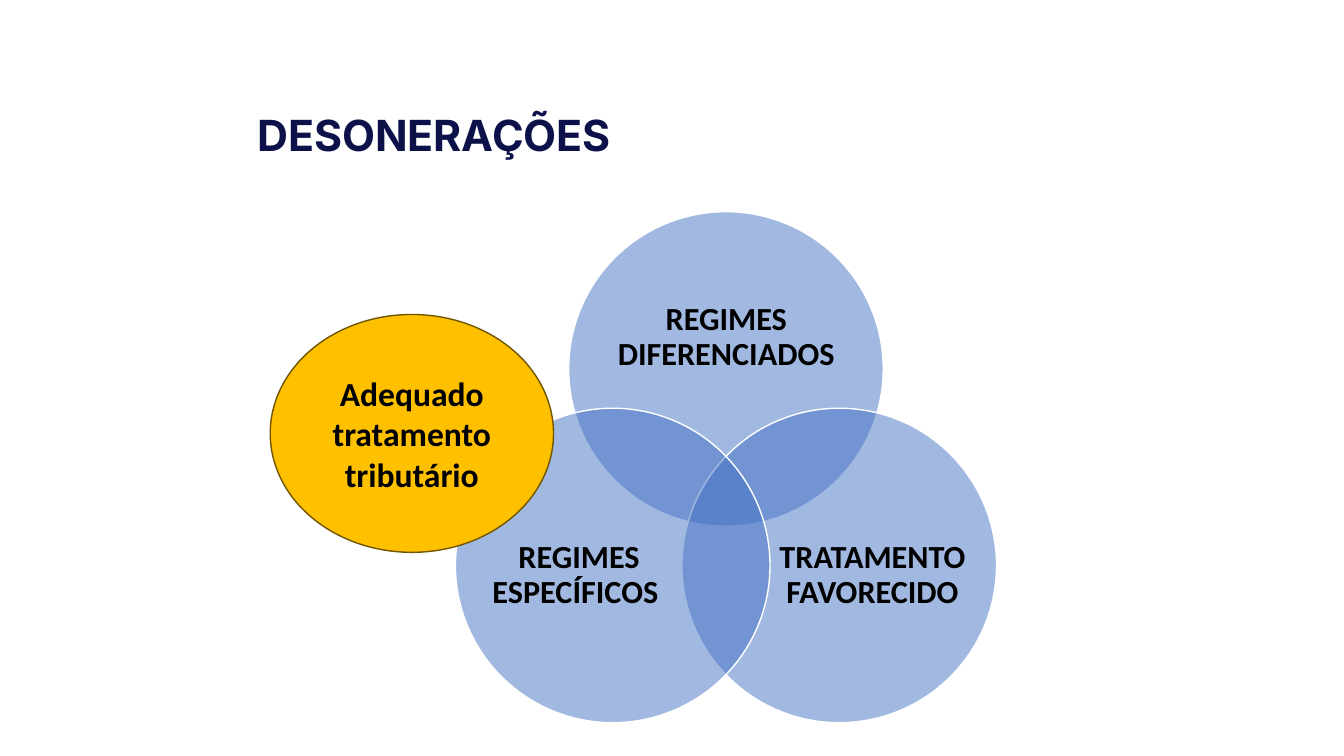
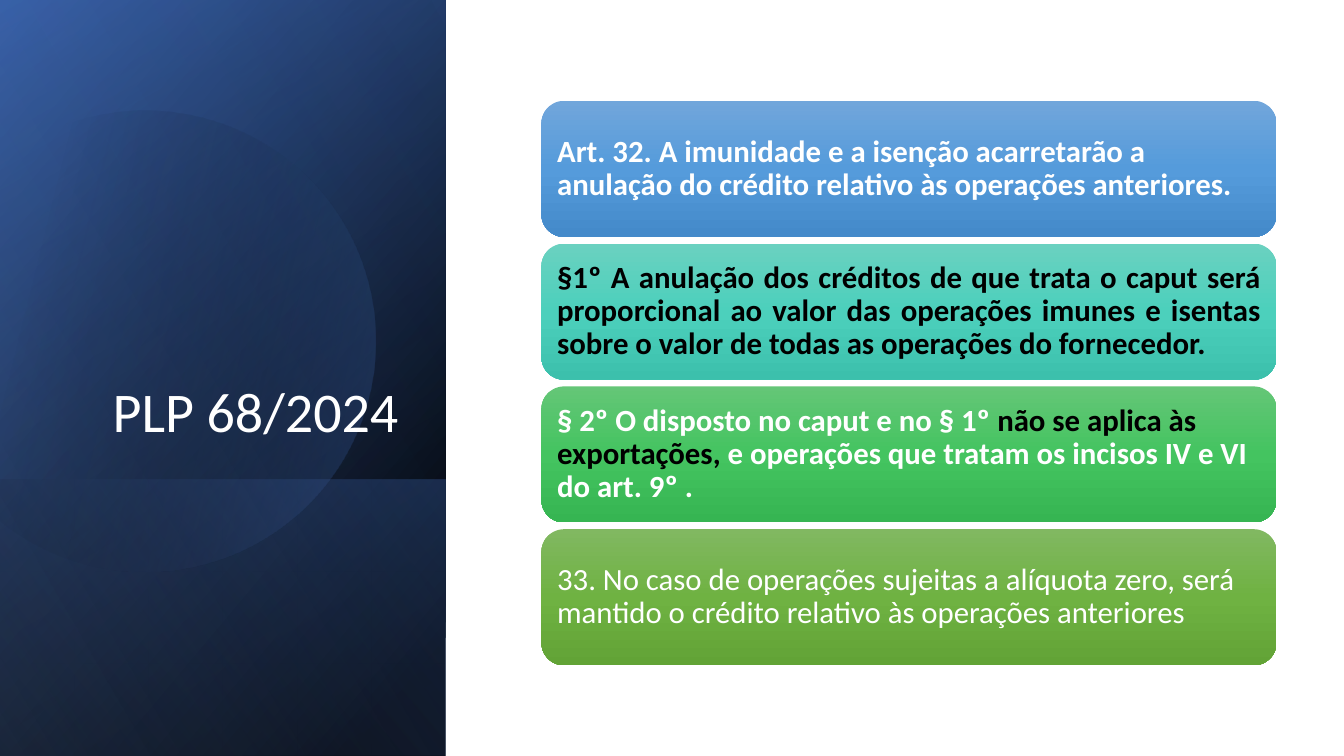
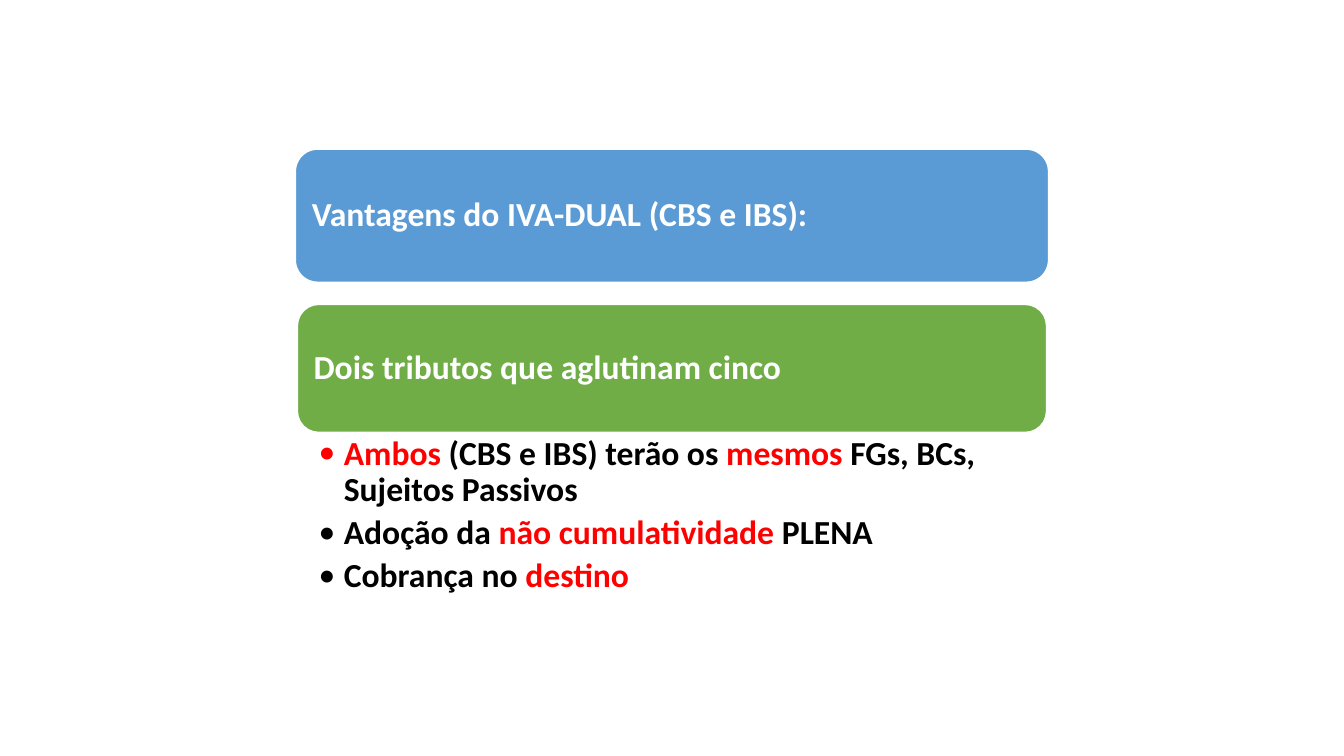
from dataclasses import dataclass
from itertools import pairwise
from math import cos, radians, sin

from lxml.etree import SubElement
from pptx import Presentation
from pptx.dml.color import RGBColor
from pptx.enum.shapes import MSO_SHAPE as SHAPE
from pptx.enum.text import MSO_ANCHOR as ANCHOR, PP_ALIGN as ALIGN
from pptx.oxml.ns import qn
from pptx.util import Inches, Pt


@dataclass(frozen=True)
class Theme:
    font: str = "Calibri"
    title_font: str = "Inter"
    black: str = "000000"
    white: str = "FFFFFF"
    navy: str = "0C1249"
    blue: str = "4472C4"
    deep_blue: str = "2F5597"
    pale_blue: str = "8FAADC"
    sky: str = "5B9BD5"
    green: str = "70AD47"
    gold: str = "FFC000"
    gold_line: str = "705400"
    red: str = "FF0000"
    row_blue: tuple = ("71A6DB", "559BDB", "448ACA")
    row_teal: tuple = ("6AD1C0", "4CD0BC", "3CC0AC")
    row_emerald: tuple = ("64C677", "44C460", "36B552")
    row_green: tuple = ("81B861", "6FB242", "62A336")
    title: float = 30.6
    panel_title: float = 40
    body: float = 24
    circle: float = 23
    article: float = 22


T = Theme()


def add_alpha(clr, opacity):
    SubElement(clr, qn("a:alpha")).set("val", str(opacity * 1000))


def fill_gradient(sp, stops, angle):
    """Stops are (position, colour, opacity), all but colour in percent; angle runs clockwise."""
    sp.fill.gradient()
    grad = sp.element.spPr.find(qn("a:gradFill"))
    for child in list(grad):
        grad.remove(child)
    grad.set("rotWithShape", "1")
    stop_list = SubElement(grad, qn("a:gsLst"))
    for position, color, opacity in stops:
        stop = SubElement(stop_list, qn("a:gs"))
        stop.set("pos", str(position * 1000))
        clr = SubElement(stop, qn("a:srgbClr"))
        clr.set("val", color)
        if opacity < 100:
            add_alpha(clr, opacity)
    lin = SubElement(grad, qn("a:lin"))
    lin.set("ang", str(angle * 60000))
    lin.set("scaled", "0")


def write(tf, paragraphs, size, color=T.black, font=T.font, bold=True, align=ALIGN.LEFT,
          anchor=ANCHOR.MIDDLE, insets=(0.1, 0.05, 0.1, 0.05), spacing=0.9, after=0, bullet=None):
    """Fill a frame; a paragraph is a string or a list of (text, colour) runs."""
    tf.word_wrap = True
    tf.vertical_anchor = anchor
    tf.margin_left, tf.margin_top, tf.margin_right, tf.margin_bottom = map(Inches, insets)
    for i, runs in enumerate(paragraphs):
        p = tf.add_paragraph() if i else tf.paragraphs[0]
        p.alignment, p.line_spacing, p.space_after = align, spacing, Pt(after)
        if bullet:
            pPr = p._p.get_or_add_pPr()
            pPr.set("marL", str(Inches(0.25)))
            pPr.set("indent", str(-Inches(0.25)))
            SubElement(pPr, qn("a:buFont")).set("typeface", font)
            SubElement(pPr, qn("a:buChar")).set("char", bullet)
        for text, run_color in [(runs, color)] if isinstance(runs, str) else runs:
            r = p.add_run()
            r.text = text
            r.font.name, r.font.size, r.font.bold = font, Pt(size), bold
            r.font.color.rgb = RGBColor.from_string(run_color)


class Deck:
    def __init__(self):
        self.prs = Presentation()
        self.prs.slide_width, self.prs.slide_height = Inches(13.33), Inches(7.5)

    def new_slide(self):
        self.slide = self.prs.slides.add_slide(self.prs.slide_layouts[6])

    def text(self, box, paragraphs, size, **fmt):
        sp = self.slide.shapes.add_textbox(*map(Inches, box))
        write(sp.text_frame, paragraphs, size, **fmt)

    def shape(self, kind, box, fill=None, line=None, opacity=100):
        sp = self.slide.shapes.add_shape(kind, *map(Inches, box))
        sp.shadow.inherit = False
        if fill:
            sp.fill.solid()
            sp.fill.fore_color.rgb = RGBColor.from_string(fill)
            if opacity < 100:
                add_alpha(sp.element.spPr.find(qn("a:solidFill"))[0], opacity)
        if line:
            sp.line.color.rgb = RGBColor.from_string(line)
            sp.line.width = Pt(1)
        else:
            sp.line.fill.background()
        return sp

    def panel(self, top, height, stops, angle, width=4.42):
        """Left-hand gradient panel, a flipped rectangle turned a quarter."""
        box = ((width - height) / 2, top + (height - width) / 2, height, width)
        sp = self.shape(SHAPE.RECTANGLE, box)
        sp.rotation = 90
        sp.element.spPr.find(qn("a:xfrm")).set("flipH", "1")
        fill_gradient(sp, stops, angle)

    def cut_disc(self, cx, cy, radius, angles, rotation, stops, angle):
        """Disc with a straight cut, its arcs joining the given angles clockwise."""
        points = [(Inches(cx + radius * cos(radians(a))),
                   Inches(cy + radius * sin(radians(a)))) for a in angles]
        builder = self.slide.shapes.build_freeform(*points[0])
        builder.add_line_segments(points[1:], close=True)
        sp = builder.convert_to_shape()
        outline = next(sp.element.iter(qn("a:path")))
        for segment, (start, end) in zip(outline.findall(qn("a:lnTo")), pairwise(angles)):
            arc = SubElement(outline, qn("a:arcTo"))
            for name, value in (("wR", Inches(radius)), ("hR", Inches(radius)),
                                ("stAng", round(start % 360 * 60000)),
                                ("swAng", round((end - start) * 60000))):
                arc.set(name, str(value))
            outline.replace(segment, arc)
        sp.rotation = rotation
        sp.shadow.inherit = False
        sp.line.fill.background()
        fill_gradient(sp, stops, angle)

    def card(self, box, text, size, fill=None, line=None, gradient=None, inset=0.09, **fmt):
        sp = self.shape(SHAPE.ROUNDED_RECTANGLE, box, fill, line)
        if gradient:
            fill_gradient(sp, [(50 * i, c, 100) for i, c in enumerate(gradient)], 90)
        write(sp.text_frame, [text], size, insets=(inset,) * 4, **fmt)


def relief_slide(deck):
    deck.new_slide()
    deck.text((1.83, 0.95, 4.95, 0.85), ["DESONERAÇÕES"], T.title, color=T.navy,
              font=T.title_font, align=ALIGN.CENTER, anchor=ANCHOR.TOP,
              insets=(0.13,) * 4, spacing=1)
    diameter = 3.12
    dx, dy = 0.36 * diameter, 1.95
    for left, top, label, label_box in (
        (5.64, 2.1, "REGIMES DIFERENCIADOS", (6.06, 2.65, 2.29, 1.4)),
        (5.64 + dx, 2.1 + dy, "TRATAMENTO FAVORECIDO", (7.72, 4.85, 1.87, 1.72)),
        (5.64 - dx, 2.1 + dy, "REGIMES ESPECÍFICOS ", (4.81, 4.85, 1.87, 1.72)),
    ):
        deck.shape(SHAPE.OVAL, (left, top, diameter, diameter), T.blue, T.white, opacity=50)
        deck.text(label_box, [label], T.circle, align=ALIGN.CENTER, insets=(0,) * 4)
    sp = deck.shape(SHAPE.OVAL, (2.68, 3.12, 2.81, 2.36), T.gold, T.gold_line)
    write(sp.text_frame, ["Adequado tratamento tributário"], T.body,
          align=ALIGN.CENTER, spacing=1)


def bill_slide(deck):
    deck.new_slide()
    deck.panel(0, 7.5, [(8, T.black, 100), (100, T.deep_blue, 100)], 50)
    deck.panel(0, 7.5, [(0, T.black, 0), (99, T.blue, 46)], 30)
    deck.panel(4.76, 2.74, [(2, T.blue, 29), (100, T.black, 30)], 130)
    deck.cut_disc(1.43, 3.34, 2.29, (242.5, 270, 360, 450, 509.7), 343.9,
                  [(29, T.black, 0), (100, T.blue, 43)], 30)
    deck.panel(0, 7.5, [(0, T.black, 0), (99, T.pale_blue, 11)], 120)
    deck.text((0.64, 1.84, 3.41, 2.62), ["PLP 68/2024"], T.panel_title, color=T.white,
              bold=False, align=ALIGN.RIGHT, anchor=ANCHOR.BOTTOM)
    articles = (
        (T.row_blue, "Art. 32. A imunidade e a isenção acarretarão a anulação do crédito "
                     "relativo às operações anteriores.", {}),
        (T.row_teal, "§1º A anulação dos créditos de que trata o caput será proporcional ao "
                     "valor das operações imunes e isentas sobre o valor de todas as operações "
                     "do fornecedor.", {"color": T.black, "align": ALIGN.JUSTIFY}),
        (T.row_emerald, [("§ 2º O disposto no caput e no § 1º ", T.white),
                         ("não se aplica às exportações,", T.black),
                         (" e operações que tratam os incisos IV e VI do art. 9º .", T.white)],
         {}),
        (T.row_green, "33. No caso de operações sujeitas a alíquota zero, será mantido o "
                      "crédito relativo às operações anteriores", {"bold": False}),
    )
    top, bottom, height = 1, 6.6, 1.35
    pitch = (bottom - top - height) / (len(articles) - 1)
    for i, (gradient, text, fmt) in enumerate(articles):
        box = (5.37, top + i * pitch, 7.29, height)
        deck.card(box, text, T.article, gradient=gradient, **{"color": T.white, **fmt})


def advantages_slide(deck):
    deck.new_slide()
    for box, fill, text in (
        ((2.93, 1.48, 7.47, 1.32), T.sky, "Vantagens do IVA-DUAL (CBS e IBS):"),
        ((2.95, 3.02, 7.43, 1.27), T.green, "Dois tributos que aglutinam cinco"),
    ):
        deck.card(box, text, T.body, fill=fill, line=T.white, color=T.white, inset=0.1)
    deck.text((2.92, 4.3, 7.48, 1.73), [
        [("Ambos", T.red), (" (CBS e IBS) terão os ", T.black), ("mesmos ", T.red),
         ("FGs, BCs, Sujeitos Passivos", T.black)],
        [("Adoção da ", T.black), ("não cumulatividade ", T.red), ("PLENA", T.black)],
        [("Cobrança no ", T.black), ("destino", T.red)],
    ], T.body, anchor=ANCHOR.TOP, insets=(0.24, 0.03, 0.19, 0.03), after=4.8, bullet="•")


def main():
    deck = Deck()
    relief_slide(deck)
    bill_slide(deck)
    advantages_slide(deck)
    deck.prs.save("out.pptx")


if __name__ == "__main__":
    main()
